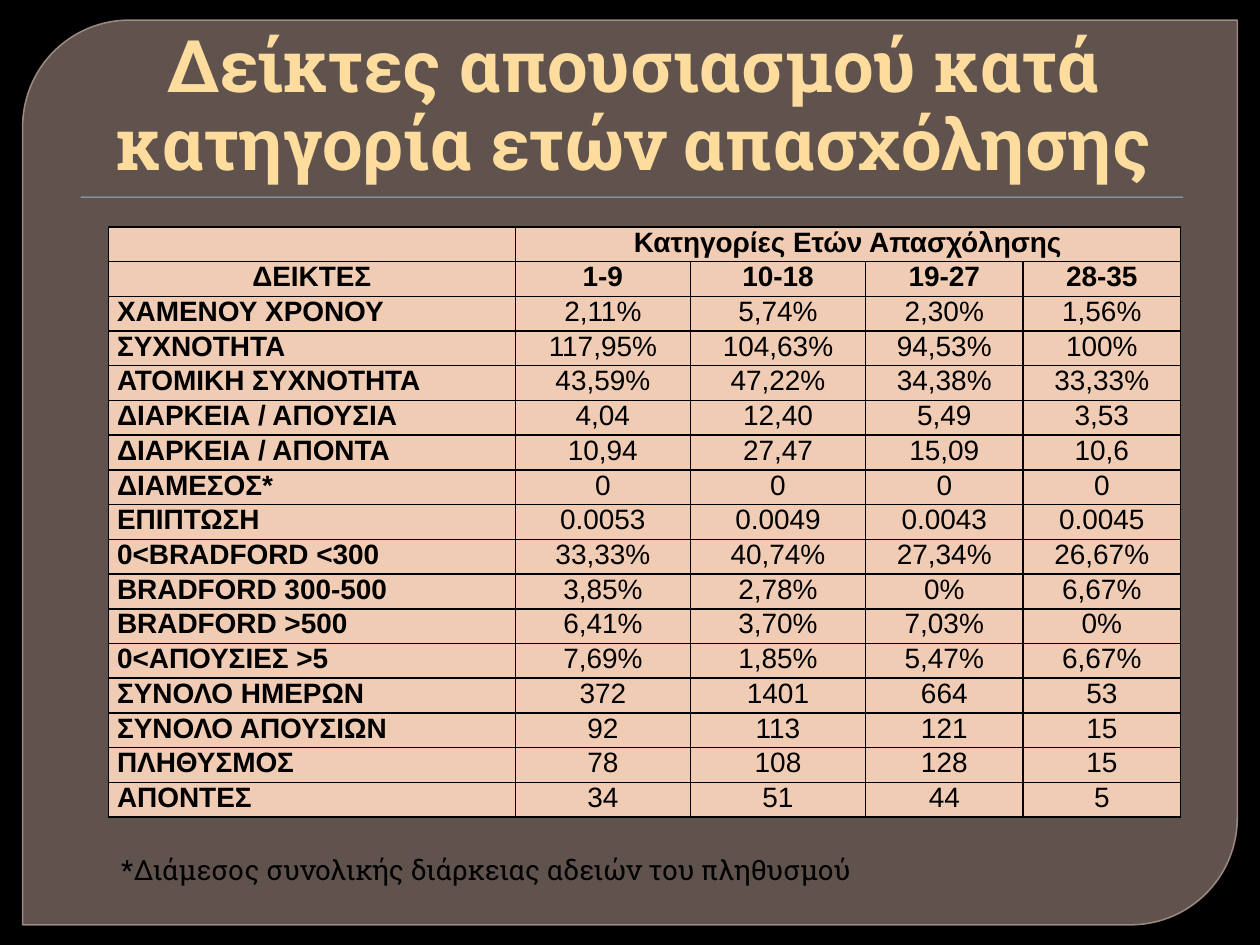
from lxml import etree
from pptx import Presentation
from pptx.dml.color import RGBColor
from pptx.enum.shapes import MSO_SHAPE
from pptx.enum.text import MSO_ANCHOR, PP_ALIGN
from pptx.oxml.ns import qn
from pptx.util import Inches, Pt

PANEL_SHAPE = MSO_SHAPE.ROUND_2_DIAG_RECTANGLE
RECTANGLE = MSO_SHAPE.RECTANGLE
BOTTOM, TOP = MSO_ANCHOR.BOTTOM, MSO_ANCHOR.TOP
LEFT, CENTER = PP_ALIGN.LEFT, PP_ALIGN.CENTER

COLORS = {
    "background": "000000",
    "panel": "948079",
    "panel_line": "A9948D",
    "rule": "94B6D2",
    "title": "FDDC9E",
    "text": "000000",
    "cell": "F1CCB5",
    "border": "000000",
}
TITLE_FONT, TABLE_FONT = "Roboto Slab", "Arial"
TABLE_SIZE = 16

COLUMN_WIDTHS = [3.23, 1.39, 1.39, 1.25, 1.25]
GROUP_HEADING = "Κατηγορίες Ετών Απασχόλησης"
ROWS = [
    ["ΔΕΙΚΤΕΣ", "1-9", "10-18", "19-27", "28-35"],
    ["ΧΑΜΕΝΟΥ ΧΡΟΝΟΥ", "2,11%", "5,74%", "2,30%", "1,56%"],
    ["ΣΥΧΝΟΤΗΤΑ", "117,95%", "104,63%", "94,53%", "100%"],
    ["ΑΤΟΜΙΚΗ ΣΥΧΝΟΤΗΤΑ", "43,59%", "47,22%", "34,38%", "33,33%"],
    ["ΔΙΑΡΚΕΙΑ / ΑΠΟΥΣΙΑ", "4,04", "12,40", "5,49", "3,53"],
    ["ΔΙΑΡΚΕΙΑ / ΑΠΟΝΤΑ", "10,94", "27,47", "15,09", "10,6"],
    ["ΔΙΑΜΕΣΟΣ*", "0", "0", "0", "0"],
    ["ΕΠΙΠΤΩΣΗ", "0.0053", "0.0049", "0.0043", "0.0045"],
    ["0<BRADFORD <300", "33,33%", "40,74%", "27,34%", "26,67%"],
    ["BRADFORD 300-500", "3,85%", "2,78%", "0%", "6,67%"],
    ["BRADFORD >500", "6,41%", "3,70%", "7,03%", "0%"],
    ["0<ΑΠΟΥΣΙΕΣ >5", "7,69%", "1,85%", "5,47%", "6,67%"],
    ["ΣΥΝΟΛΟ ΗΜΕΡΩΝ", "372", "1401", "664", "53"],
    ["ΣΥΝΟΛΟ ΑΠΟΥΣΙΩΝ", "92", "113", "121", "15"],
    ["ΠΛΗΘΥΣΜΟΣ", "78", "108", "128", "15"],
    ["ΑΠΟΝΤΕΣ", "34", "51", "44", "5"],
]


def color(name):
    return RGBColor.from_string(COLORS[name])


def inches(box):
    return [Inches(length) for length in box]


def set_alpha(fill_parent, percent):
    """Make the solid fill directly below an element partly transparent."""
    solid = fill_parent.find(qn("a:solidFill"))
    etree.SubElement(solid[0], qn("a:alpha"), val=str(percent * 1000))


def write(frame, text, font, size, color_name, bold=False, align=LEFT):
    para = frame.paragraphs[0]
    para.text = text
    para.alignment = align
    for span in para.runs:
        span.font.name = font
        span.font.size = Pt(size)
        span.font.bold = bold
        span.font.color.rgb = color(color_name)
    return para


def add_panel(slide, box):
    panel = slide.shapes.add_shape(PANEL_SHAPE, *inches(box))
    panel.shadow.inherit = False
    panel.adjustments[0] = 0.118
    panel.adjustments[1] = 0
    panel.fill.solid()
    panel.fill.fore_color.rgb = color("panel")
    panel.line.color.rgb = color("panel_line")
    panel.line.width = Pt(0.87)
    properties = panel.fill._xPr
    set_alpha(properties, 65)
    set_alpha(properties.find(qn("a:ln")), 88)


def add_rule(slide, box):
    rule = slide.shapes.add_shape(RECTANGLE, *inches(box))
    rule.shadow.inherit = False
    rule.fill.solid()
    rule.fill.fore_color.rgb = color("rule")
    rule.line.fill.background()


def add_title(slide, box):
    frame = slide.shapes.add_textbox(*inches(box)).text_frame
    frame.word_wrap = True
    frame.vertical_anchor = BOTTOM
    para = write(frame, "Δείκτες απουσιασμού κατά κατηγορία ετών απασχόλησης",
                 TITLE_FONT, 41.4, "title", bold=True, align=CENTER)
    para.line_spacing = 0.9
    para._p.get_or_add_pPr().set("marL", str(Inches(0.06)))


def add_footnote(slide, box):
    frame = slide.shapes.add_textbox(*inches(box)).text_frame
    frame.word_wrap = True
    write(frame, "*Διάμεσος συνολικής διάρκειας αδειών του πληθυσμού",
          TITLE_FONT, 16, "text")


def style_cell(cell):
    """Give a cell its margins, thin borders and fill."""
    cell.margin_left = cell.margin_right = Inches(0.07)
    cell.margin_top = cell.margin_bottom = 0
    cell.vertical_anchor = TOP
    properties = cell._tc.get_or_add_tcPr()
    for side in ("lnL", "lnR", "lnT", "lnB"):
        border = etree.SubElement(properties, qn(f"a:{side}"), w=str(Pt(1)))
        solid = etree.SubElement(border, qn("a:solidFill"))
        etree.SubElement(solid, qn("a:srgbClr"), val=COLORS["border"])
    cell.fill.solid()
    cell.fill.fore_color.rgb = color("cell")


def add_index_table(slide, box):
    rows = [["", GROUP_HEADING, "", "", ""]] + ROWS
    table = slide.shapes.add_table(
        len(rows), len(COLUMN_WIDTHS), *inches(box)).table
    table.first_row = table.horz_banding = False
    for column, width in zip(table.columns, COLUMN_WIDTHS):
        column.width = Inches(width)
    for row_number, values in enumerate(rows):
        table.rows[row_number].height = Inches(box[3] / len(rows))
        for column_number, value in enumerate(values):
            cell = table.cell(row_number, column_number)
            style_cell(cell)
            heading = row_number < 2
            label = column_number == 0
            para = write(cell.text_frame, value, TABLE_FONT, TABLE_SIZE, "text",
                         bold=heading or label,
                         align=LEFT if label and not heading else CENTER)
            if not value:
                etree.SubElement(para._p, qn("a:endParaRPr"),
                                 sz=str(TABLE_SIZE * 100))
    table.cell(0, 1).merge(table.cell(0, len(COLUMN_WIDTHS) - 1))


def main():
    deck = Presentation()
    deck.slide_width, deck.slide_height = Inches(10), Inches(7.5)
    slide = deck.slides.add_slide(deck.slide_layouts[6])
    slide.background.fill.solid()
    slide.background.fill.fore_color.rgb = color("background")
    add_panel(slide, (0.18, 0.16, 9.64, 7.18))
    add_rule(slide, (0.64, 1.56, 8.75, 0.01))
    add_title(slide, (0.5, 0.28, 9, 1.25))
    add_footnote(slide, (0.86, 6.72, 8.05, 0.37))
    add_index_table(slide, (0.86, 1.8, 8.52, 4.69))
    deck.save("out.pptx")


if __name__ == "__main__":
    main()
